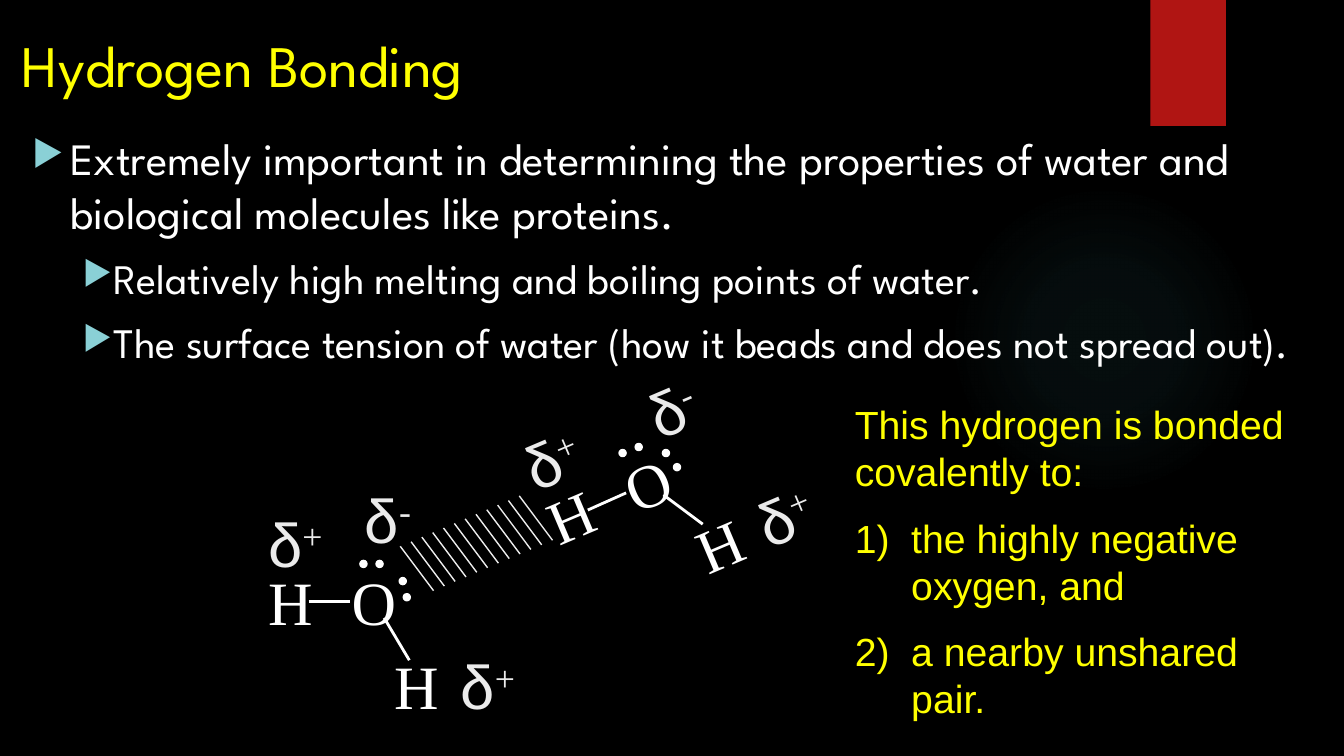
import pptx
import pptx.util
import pptx.dml.color
import pptx.enum.shapes
import pptx.enum.text
import pptx.oxml
import pptx.oxml.ns
from lxml import etree

Inches = pptx.util.Inches
Pt = pptx.util.Pt
RGB = pptx.dml.color.RGBColor.from_string
SHAPES = pptx.enum.shapes.MSO_SHAPE
COLORS = {"black": "000000", "white": "FFFFFF", "yellow": "FFFF00", "red": "B01513",
          "glow": "50B9C1", "bullet": "8AD0D6", "grey": "EBEBEB"}
NS = pptx.oxml.ns.nsdecls("a")
TILT = 337

deck = pptx.Presentation()
deck.slide_width, deck.slide_height = Inches(13.33), Inches(7.5)
page = deck.slides.add_slide(deck.slide_layouts[6])
page.background.fill.solid()
page.background.fill.fore_color.rgb = RGB(COLORS["black"])


def add_text(left, top, width, height, lines, size, font, color):
    """Add a text box with one paragraph per line, all in one style."""
    box = page.shapes.add_textbox(Inches(left), Inches(top), Inches(width), Inches(height))
    box.text_frame.word_wrap = True
    box.text_frame.text = "\n".join(lines)
    for para in box.text_frame.paragraphs:
        for span in para.runs:
            span.font.size, span.font.name = Pt(size), font
            span.font.color.rgb = RGB(COLORS[color])
    return box


def add_line(start_x, start_y, end_x, end_y, color, width):
    line = page.shapes.add_connector(
        pptx.enum.shapes.MSO_CONNECTOR.STRAIGHT,
        Inches(start_x), Inches(start_y), Inches(end_x), Inches(end_y))
    line.line.color.rgb = RGB(COLORS[color])
    line.line.width = Pt(width)
    etree.SubElement(line._element.spPr, pptx.oxml.ns.qn("a:effectLst"))


# Background glow and red tab
glow = page.shapes.add_shape(SHAPES.OVAL, Inches(9.41), Inches(1.83), Inches(3.08), Inches(3.08))
glow.line.fill.background()
glow.shadow.inherit = False
stops = "".join(
    f'<a:gs pos="{place * 1000}"><a:srgbClr val="{COLORS["glow"]}">'
    f'<a:alpha val="{alpha * 1000}"/></a:srgbClr></a:gs>'
    for place, alpha in [(0, 7), (36, 6), (69, 0)])
glow._element.spPr.find(pptx.oxml.ns.qn("a:prstGeom")).addnext(pptx.oxml.parse_xml(
    f'<a:gradFill {NS}><a:gsLst>{stops}</a:gsLst><a:path path="circle">'
    '<a:fillToRect l="50000" t="50000" r="50000" b="50000"/></a:path></a:gradFill>'))

tab = page.shapes.add_shape(SHAPES.RECTANGLE, Inches(11.41), 0, Inches(0.75), Inches(1.25))
tab.fill.solid()
tab.fill.fore_color.rgb = RGB(COLORS["red"])
tab.line.fill.background()
tab.shadow.inherit = False

# Title and bullets
add_text(0.12, 0.24, 5.7, 0.91, ["Hydrogen Bonding"], 42, "League Spartan", "yellow")
body = add_text(0.22, 1.25, 12.78, 3.04, [
    "Extremely important in determining the properties of water and "
    "biological molecules like proteins.",
    "Relatively high melting and boiling points of water.",
    "The surface tension of water (how it beads and does not spread out).",
], 32, "League Spartan", "white")
for index, para in enumerate(body.text_frame.paragraphs):
    margin, hanging = (0.81, 0.31) if index else (0.38, 0.38)
    props = para._p.get_or_add_pPr()
    props.set("marL", str(Inches(margin)))
    props.set("indent", str(-Inches(hanging)))
    for bullet in (f'<a:buClr {NS}><a:srgbClr val="{COLORS["bullet"]}"/></a:buClr>',
                   f'<a:buSzPct {NS} val="80000"/>', f'<a:buChar {NS} char="▶"/>'):
        props.append(pptx.oxml.parse_xml(bullet))
    if index:
        para.level = 1
        para.space_before = Pt(10)
        para.runs[0].font.size = Pt(30)

# Two water molecules: atoms, bonds, unshared pairs and partial charges
for atom, left, top, turn in [
        ("H", 2.56, 5.55, 0), ("H", 3.81, 6.38, 0), ("O", 3.39, 5.55, 0),
        ("H", 5.34, 4.71, TILT), ("H", 6.82, 4.99, TILT), ("O", 6.11, 4.39, TILT)]:
    label = add_text(left, top, 0.58, 0.84, [atom], 44, "Times New Roman", "white")
    label.text_frame.word_wrap = False
    label.rotation = turn

for bond in [(3.06, 5.97, 3.47, 5.97), (3.81, 6.13, 4.06, 6.55),
             (5.83, 5.06, 6.21, 4.89), (6.58, 4.91, 6.97, 5.2)]:
    add_line(*bond, "white", 2)

for left, top in [(3.57, 5.56), (3.73, 5.56), (3.96, 5.73), (4, 5.89),
                  (6.14, 4.46), (6.3, 4.4), (6.57, 4.46), (6.68, 4.6)]:
    electron = page.shapes.add_shape(
        SHAPES.OVAL, Inches(left), Inches(top), Inches(0.07), Inches(0.07))
    electron.fill.solid()
    electron.fill.fore_color.rgb = RGB(COLORS["white"])
    electron.line.color.rgb = RGB(COLORS["white"])
    electron.line.width = Pt(1)
    electron.shadow.inherit = False

for sign, left, top, turn in [
        ("+", 2.56, 4.97, 0), ("-", 3.52, 4.73, 0), ("+", 4.47, 6.38, 0),
        ("+", 5.11, 4.14, TILT), ("-", 6.34, 3.62, TILT), ("+", 7.42, 4.7, TILT)]:
    charge = add_text(left, top, 0.75, 0.84, ["δ"], 44, "Arial", "grey")
    charge.text_frame.word_wrap = False
    charge.rotation = turn
    span = charge.text_frame.paragraphs[0].add_run()
    span.text = sign
    span.font.size, span.font.name = Pt(44), "Times New Roman"
    span.font.color.rgb = RGB(COLORS["grey"])
    span._r.get_or_add_rPr().set("baseline", "30000")

# Hatching for the hydrogen bond
for step in range(12):
    x, y = 5.15 - step * 1.18 / 11, 4.92 + step * 0.5 / 11
    add_line(x, y, x + 0.33, y + 0.44, "grey", 1)

# Explanation
note = add_text(8.38, 3.92, 4.63, 3.4, [
    "This hydrogen is bonded covalently to:",
    "the highly negative oxygen, and",
    "a nearby unshared pair.",
], 28, "Arial", "yellow")
for para in note.text_frame.paragraphs[1:]:
    props = para._p.get_or_add_pPr()
    props.set("marL", str(Inches(0.56)))
    props.set("indent", str(-Inches(0.56)))
    props.append(pptx.oxml.parse_xml(f'<a:buAutoNum {NS} type="arabicParenR"/>'))
    para.space_before = Pt(14)

deck.save("out.pptx")
